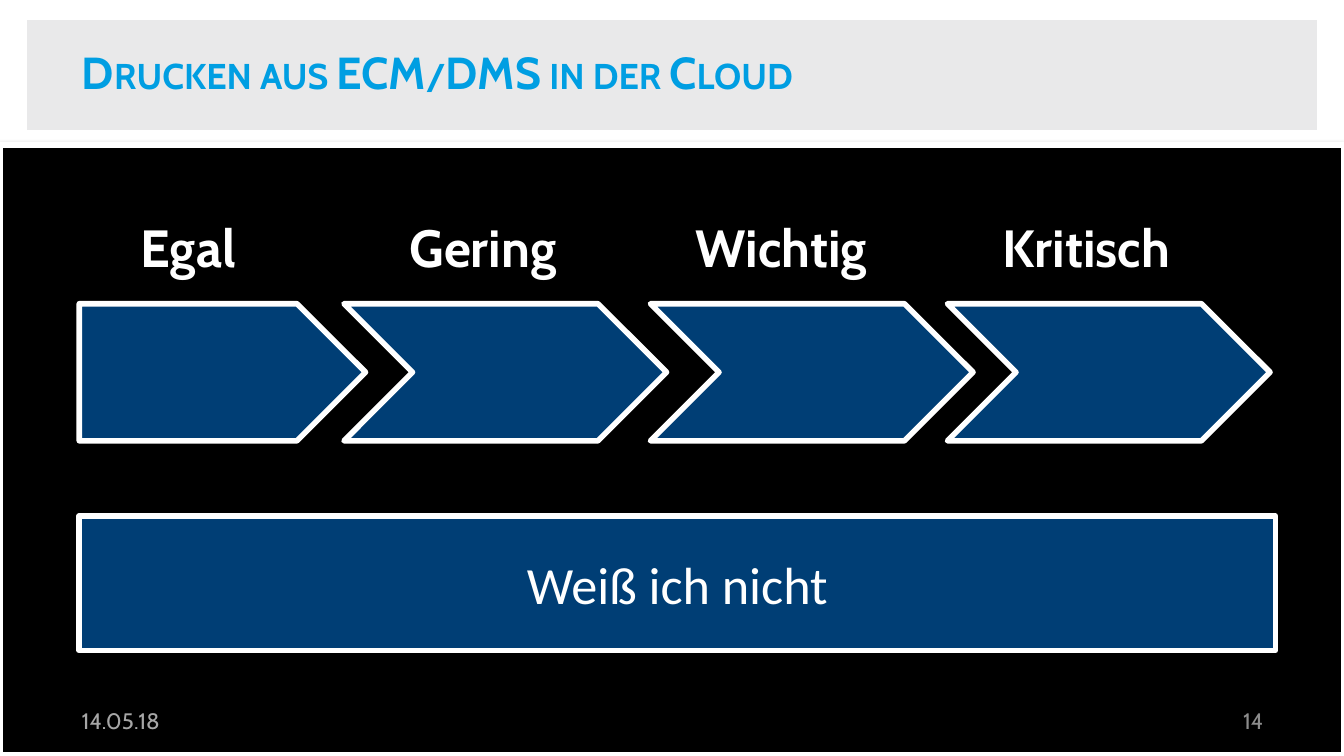
from lxml import etree
from pptx import Presentation
from pptx.dml.color import RGBColor
from pptx.enum.shapes import MSO_SHAPE
from pptx.enum.text import MSO_ANCHOR, MSO_AUTO_SIZE, PP_ALIGN
from pptx.oxml.ns import qn
from pptx.util import Inches, Pt

WHITE = RGBColor(0xFF, 0xFF, 0xFF)
BLACK = RGBColor(0x00, 0x00, 0x00)
BAND_GREY = RGBColor(0xE9, 0xE9, 0xEA)
TITLE_BLUE = RGBColor(0x00, 0x9E, 0xE2)
NAVY = RGBColor(0x00, 0x3E, 0x75)
NUMBER_GREY = RGBColor(0x8C, 0x8C, 0x8C)
DATE_GREY = RGBColor(0xA6, 0xA6, 0xA6)

RECTANGLE = MSO_SHAPE.RECTANGLE
ROUNDED = MSO_SHAPE.ROUNDED_RECTANGLE
PENTAGON = MSO_SHAPE.PENTAGON
CHEVRON = MSO_SHAPE.CHEVRON
LEFT, CENTER, RIGHT = PP_ALIGN.LEFT, PP_ALIGN.CENTER, PP_ALIGN.RIGHT
TOP, MIDDLE = MSO_ANCHOR.TOP, MSO_ANCHOR.MIDDLE
NO_FIT, GROW = MSO_AUTO_SIZE.NONE, MSO_AUTO_SIZE.SHAPE_TO_FIT_TEXT

TITLE_ONLY = 5


def write_text(shape, text, size=28, color=WHITE, font="Cabin", bold=False,
               small_caps=False, align=LEFT, anchor=MIDDLE, wrap=True, fit=NO_FIT):
    frame = shape.text_frame
    frame.word_wrap = wrap
    frame.auto_size = fit
    frame.vertical_anchor = anchor
    paragraph = frame.paragraphs[0]
    paragraph.alignment = align
    run = paragraph.add_run()
    run.text = text
    run.font.name = font
    run.font.size = Pt(size)
    run.font.bold = bold
    run.font.color.rgb = color
    if small_caps:
        run.font._element.set("cap", "small")


def add_shadow(shape):
    effects = shape._element.spPr.find(qn("a:effectLst"))
    shadow = etree.SubElement(effects, qn("a:outerShdw"), blurRad=str(Pt(3.1)),
                              dist=str(Pt(1.6)), dir="5400000", rotWithShape="0")
    color = etree.SubElement(shadow, qn("a:srgbClr"), val=str(BLACK))
    etree.SubElement(color, qn("a:alpha"), val="38000")


class SlideBuilder:
    def __init__(self, slide):
        self.slide = slide
        self.outline = WHITE
        self.outline_width = Pt(3)

    def title(self, text, left, top, width, height):
        title = self.slide.shapes.title
        title.left, title.top = Inches(left), Inches(top)
        title.width, title.height = Inches(width), Inches(height)
        # Bring the title in front of the header band
        title.element.getparent().append(title.element)
        write_text(title, text, size=24, color=TITLE_BLUE, bold=True, small_caps=True)

    def band(self, left, top, right, bottom, fill):
        builder = self.slide.shapes.build_freeform(Inches(left), Inches(bottom))
        corners = [(right, bottom), (right, top), (left, top)]
        builder.add_line_segments([(Inches(x), Inches(y)) for x, y in corners])
        band = builder.convert_to_shape()
        band.shadow.inherit = False
        band.fill.solid()
        band.fill.fore_color.rgb = fill
        band.line.fill.background()

    def shape(self, kind, left, top, width, height, fill=NAVY):
        shape = self.slide.shapes.add_shape(
            kind, Inches(left), Inches(top), Inches(width), Inches(height))
        shape.shadow.inherit = False
        shape.fill.solid()
        shape.fill.fore_color.rgb = fill
        shape.line.color.rgb = self.outline
        shape.line.width = self.outline_width
        add_shadow(shape)
        return shape

    def text(self, text, left, top, width, height, **text_format):
        box = self.slide.shapes.add_textbox(
            Inches(left), Inches(top), Inches(width), Inches(height))
        write_text(box, text, **text_format)


def main():
    presentation = Presentation()
    presentation.slide_width = Inches(10)
    presentation.slide_height = presentation.slide_width * 9 // 16
    slide = presentation.slides.add_slide(presentation.slide_layouts[TITLE_ONLY])
    builder = SlideBuilder(slide)

    # Header band, dark body and title
    builder.band(0.2, 0.15, 9.8, 0.97, fill=BAND_GREY)
    body = builder.shape(ROUNDED, 0, 1.08, 10, 4.54, fill=BLACK)
    body.adjustments[0] = 0
    builder.title("Drucken aus ECM/DMS in der Cloud", 0.51, 0.21, 6.85, 0.65)

    # Footer
    builder.text("14", 7.17, 5.21, 2.33, 0.3, size=12, color=NUMBER_GREY, align=RIGHT)
    builder.text("14.05.18", 0.51, 5.21, 2.2, 0.3, size=12, color=DATE_GREY)

    # Arrow chain: kind, left, width, then label, label left, label width
    steps = [
        (PENTAGON, 0.59, 2.13, "Egal", 0.95, 0.98),
        (CHEVRON, 2.56, 2.4, "Gering", 2.95, 1.44),
        (CHEVRON, 4.84, 2.4, "Wichtig", 5.08, 1.64),
        (CHEVRON, 7.05, 2.4, "Kritisch", 7.36, 1.59),
    ]
    for kind, left, width, label, label_left, label_width in steps:
        builder.shape(kind, left, 2.26, width, 1.02)
        builder.text(label, label_left, 1.55, label_width, 0.57, bold=True,
                     anchor=TOP, wrap=False, fit=GROW)

    # Answer bar
    bar = builder.shape(RECTANGLE, 0.59, 3.84, 8.9, 1)
    write_text(bar, "Weiß ich nicht", font="Calibri", align=CENTER)

    presentation.save("out.pptx")


if __name__ == "__main__":
    main()
